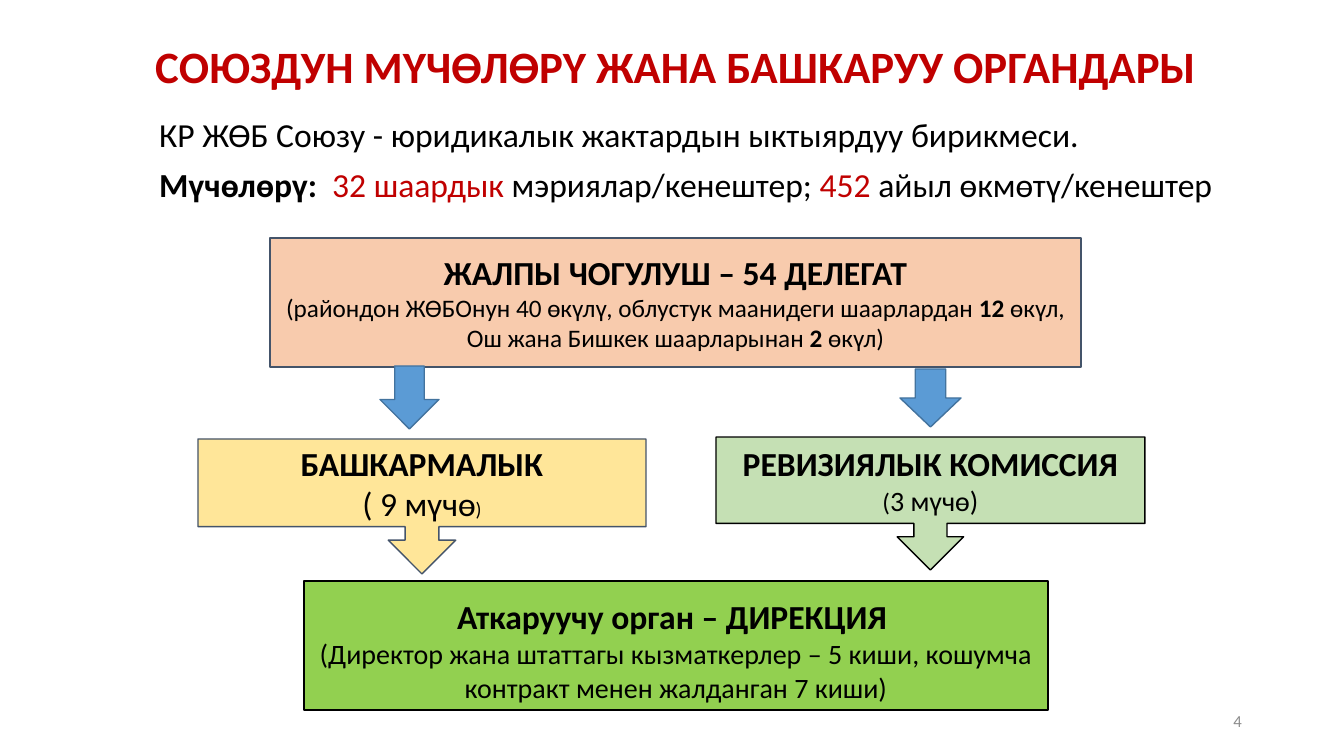
import pptx
import pptx.util
from pptx.dml.color import RGBColor
from pptx.enum.shapes import MSO_SHAPE
from pptx.enum.text import MSO_ANCHOR, MSO_AUTO_SIZE, PP_ALIGN

# Content: a paragraph is a list of runs (text, size, bold, colour)
TITLE = [[("СОЮЗДУН МҮЧӨЛӨРҮ ЖАНА БАШКАРУУ ОРГАНДАРЫ", "title", True, "accent")]]
MEMBERS = [
    [("КР ЖӨБ Союзу - юридикалык жактардын ыктыярдуу бирикмеси.", "head", False, "text")],
    [("Мүчөлөрү:  ", "head", True, "text"),
     ("32 шаардык ", "head", False, "accent"),
     ("мэриялар/кенештер; ", "head", False, "text"),
     ("452 ", "head", False, "accent"),
     ("айыл өкмөтү/кенештер", "head", False, "text")],
]
ASSEMBLY = [
    [("ЖАЛПЫ ЧОГУЛУШ – 54 ДЕЛЕГАТ", "head", True, "text")],
    [("(райондон ЖӨБОнун 40 өкүлү, облустук маанидеги шаарлардан ", "small", False, "text"),
     ("12", "small", True, "text"),
     (" өкүл,", "small", False, "text")],
    [("Ош жана Бишкек шаарларынан ", "small", False, "text"),
     ("2 ", "small", True, "text"),
     ("өкүл)", "small", False, "text")],
]
BOARD = [
    [("БАШКАРМАЛЫК", "head", True, "text")],
    [("( 9 мүчө", "head", False, "text"), (")", "tiny", False, "text")],
]
AUDIT = [
    [("РЕВИЗИЯЛЫК КОМИССИЯ", "head", True, "text")],
    [("(", "small", False, "text"), ("3 мүчө)", "detail", False, "text")],
]
DIRECTORATE = [
    [("Аткаруучу орган – ДИРЕКЦИЯ ", "head", True, "text")],
    [("(Директор жана штаттагы кызматкерлер – 5 киши, кошумча контракт менен "
      "жалданган 7 киши)", "detail", False, "text")],
]
NUMBER = [[("4", "number", False, "muted")]]

THEME = {
    "font": "Calibri",
    "sizes": {"title": 32, "head": 24, "detail": 20, "small": 18, "tiny": 14, "number": 12},
    "colours": {
        "text": "000000", "accent": "C00000", "muted": "8C8C8C", "paper": "FFFFFF",
        "slate": "44546A", "peach": "F8CBAD", "yellow": "FFE699", "mint": "C5E0B4",
        "green": "92D050", "blue": "5B9BD5", "navy": "43739E",
    },
}

# Chart parts: preset, (left, top, width, height) in px, fill, line, text
RECT, CALLOUT, ARROW = (MSO_SHAPE.RECTANGLE, MSO_SHAPE.DOWN_ARROW_CALLOUT,
                        MSO_SHAPE.DOWN_ARROW)
PARTS = [
    (RECT, (270, 238, 811, 129), "peach", "slate", ASSEMBLY),
    (CALLOUT, (198, 439, 448, 135), "yellow", "slate", BOARD),
    (ARROW, (380, 366, 59, 63), "blue", "navy", []),
    (ARROW, (900, 369, 61, 58), "blue", "navy", []),
    (RECT, (304, 581, 744, 129), "green", "text", DIRECTORATE),
    (CALLOUT, (716, 437, 429, 133), "mint", "text", AUDIT),
]
SLIDE_SIZE = (1344, 756)
PX_PER_INCH = 100.8


def px(length):
    return pptx.util.Emu(round(length * 914400 / PX_PER_INCH))


def colour(name):
    return RGBColor.from_string(THEME["colours"][name])


def place(shape, frame):
    shape.left, shape.top, shape.width, shape.height = map(px, frame)


def write(shape, paragraphs, align, anchor, line_spacing=1.0, before=0):
    box = shape.text_frame
    box.word_wrap = True
    box.auto_size = MSO_AUTO_SIZE.NONE
    box.vertical_anchor = anchor
    for index, runs in enumerate(paragraphs):
        para = box.add_paragraph() if index else box.paragraphs[0]
        para.alignment = align
        para.line_spacing = line_spacing
        para.space_before = pptx.util.Pt(before)
        for text, size, bold, tint in runs:
            span = para.add_run()
            span.text = text
            span.font.name = THEME["font"]
            span.font.size = pptx.util.Pt(THEME["sizes"][size])
            span.font.bold = bold
            span.font.color.rgb = colour(tint)


def main():
    deck = pptx.Presentation()
    deck.slide_width, deck.slide_height = map(px, SLIDE_SIZE)
    page = deck.slides.add_slide(deck.slide_layouts[0])

    # Title and membership
    title, members = page.placeholders
    place(title, (61, 15, 1230, 83))
    write(title, TITLE, PP_ALIGN.CENTER, MSO_ANCHOR.BOTTOM, 0.9)
    place(members, (149, 113, 1155, 643))
    members.fill.solid()
    members.fill.fore_color.rgb = colour("paper")
    write(members, MEMBERS, PP_ALIGN.JUSTIFY, MSO_ANCHOR.TOP, 0.9, 10)

    # Slide number
    number = page.shapes.add_textbox(*map(px, (950, 701, 302, 40)))
    write(number, NUMBER, PP_ALIGN.RIGHT, MSO_ANCHOR.MIDDLE)

    # Governing bodies and arrows
    for preset, frame, fill, line, paragraphs in PARTS:
        part = page.shapes.add_shape(preset, *map(px, frame))
        part.shadow.inherit = False
        part.fill.solid()
        part.fill.fore_color.rgb = colour(fill)
        part.line.color.rgb = colour(line)
        part.line.width = pptx.util.Pt(1)
        write(part, paragraphs, PP_ALIGN.CENTER, MSO_ANCHOR.MIDDLE)
        if paragraphs is DIRECTORATE:
            part.text_frame.margin_top = px(14)

    deck.save("out.pptx")


if __name__ == "__main__":
    main()
